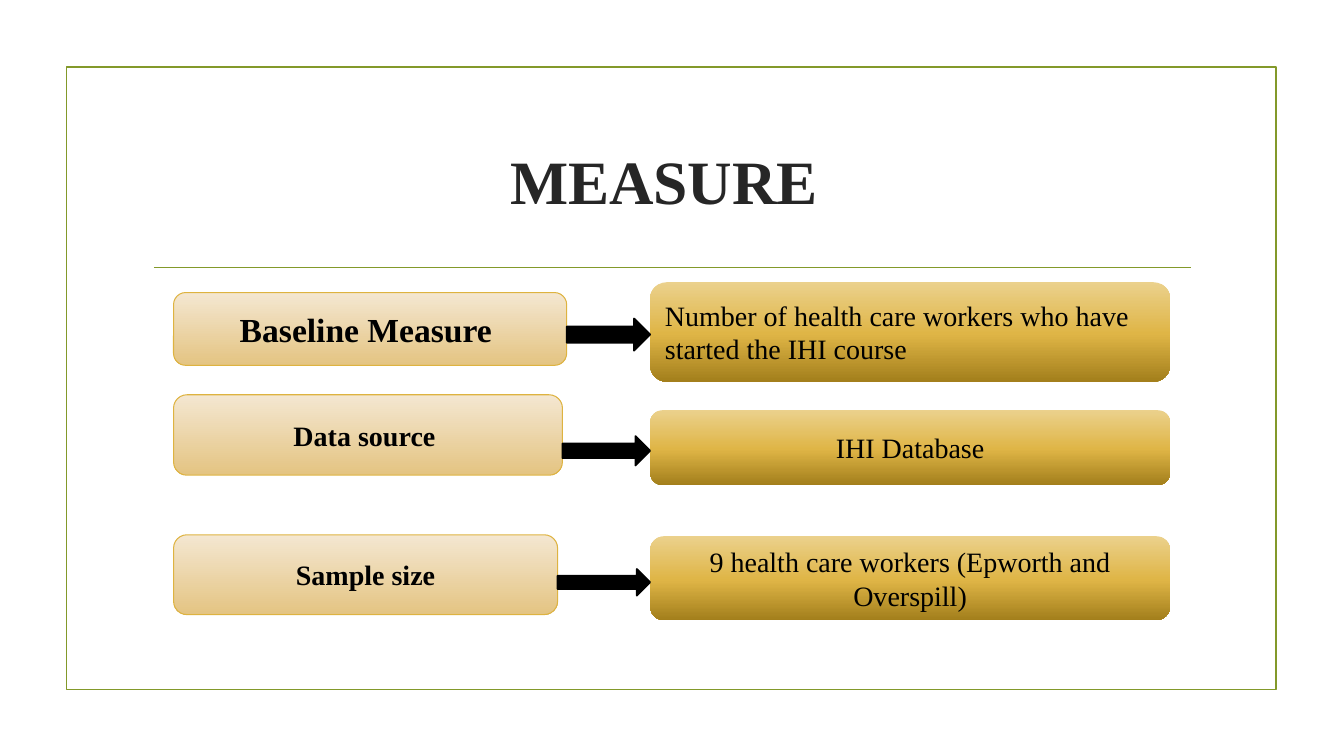
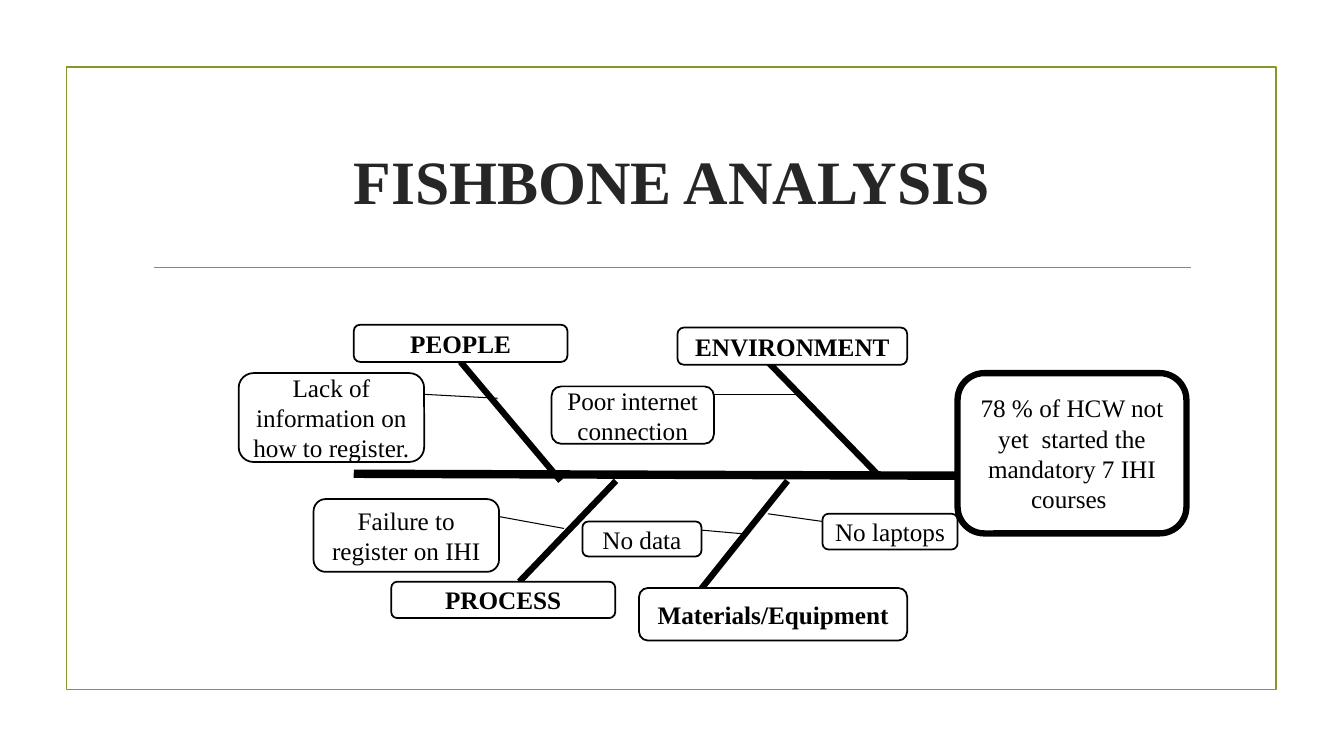
"""Build the measure and fishbone analysis slides."""
import copy

import pptx
import pptx.dml.color
import pptx.enum.shapes
import pptx.enum.text
import pptx.oxml.ns
import pptx.oxml.xmlchemy
import pptx.util

Pt = pptx.util.Pt
SHAPE = pptx.enum.shapes.MSO_SHAPE
ALIGN = pptx.enum.text.PP_ALIGN
qn = pptx.oxml.ns.qn

COLORS = {"frame": "83992A", "title": "262626", "black": "000000", "white": "FFFFFF",
          "sand_line": "DEB340"}
SAND = [(0, "F4E7D1"), (1, "E4C482")]
GOLD = [(0, "EBD18C"), (0.52, "DFB546"), (1, "A37F1C")]
FONT = "Times New Roman"
TITLE_FONT = {"name": FONT, "size": Pt(44), "bold": True}
TITLE_BOX = {"left": Pt(102), "top": Pt(77), "width": Pt(756), "height": Pt(103)}
FRAME = (47.5, 48, 864, 444.5)
RULE = (110, 191, 850.5, 191)

LABEL_LEFT, VALUE_LEFT, VALUE_WIDTH = 124, 464.4, 371.5
MEASURES = [
    {"label": ("Baseline Measure ", 24, 209, 280.8, 52),
     "value": ("Number of health care workers who have started the IHI course", 201.6, 71),
     "align": ALIGN.LEFT, "arrow": (227.5, 23)},
    {"label": ("Data source ", 20, 282, 277.8, 57.5),
     "value": ("IHI Database", 293, 53.5),
     "align": ALIGN.CENTER, "arrow": (311.5, 21)},
    {"label": ("Sample size", 20, 382, 274.3, 57),
     "value": ("9 health care workers (Epworth and Overspill)", 383, 60),
     "align": ALIGN.CENTER, "arrow": (406.5, 19)},
]

SPINE = (252.7, 338.4, 684, 339.8)
BONES = {
    "PEOPLE": (330.5, 258.5, 400.5, 343.5),
    "ENVIRONMENT": (548.5, 258.5, 626.5, 338.5),
    "PROCESS": (371, 415.5, 440, 343.5),
    "Materials/Equipment": (501, 420.5, 562.5, 343.5),
}
CATEGORIES = [
    ("PEOPLE", SHAPE.ROUNDED_RECTANGLE, (252.7, 232, 152.6, 26.5)),
    ("ENVIRONMENT", SHAPE.ROUNDED_RECTANGLE, (484, 234, 164, 26.5)),
    ("PROCESS", SHAPE.FLOWCHART_ALTERNATE_PROCESS, (279.5, 415.5, 160, 26)),
    ("Materials/Equipment", SHAPE.ROUNDED_RECTANGLE, (456.5, 420, 191.5, 37.5)),
]
CAUSES = [
    ("No laptops", (587.5, 367, 96.5, 25.5), (587.5, 372.5, 548.5, 367)),
    ("No data", (416, 372.5, 85, 25), (488, 377.5, 533, 381.5)),
    ("Failure to register on IHI", (224, 356.5, 132.5, 52), (345.5, 367, 403, 377.5)),
    ("Lack of information on how to register.", (170.5, 266.5, 132.5, 63.5),
     (299.5, 281.5, 355.5, 284.5)),
    ("Poor internet connection", (394, 276, 116, 41), (504, 281.5, 572.5, 281.5)),
]
EFFECT = ("78 % of HCW not yet  started the mandatory 7 IHI courses ",
          (684, 266.5, 163.5, 114.5))


def rgb(value):
    return pptx.dml.color.RGBColor.from_string(value)


def apply(obj, fmt):
    for name, value in fmt.items():
        setattr(obj, name, value)


def set_gradient(sp, stops):
    sp.fill.gradient()
    sp.fill.gradient_angle = 270
    gs_list = next(sp.element.iter(qn("a:gsLst")))
    while len(gs_list) < len(stops):
        gs_list.append(copy.deepcopy(gs_list[-1]))
    for stop, (position, color) in zip(sp.fill.gradient_stops, stops):
        stop.position = position
        stop.color.rgb = rgb(color)


def set_line(obj, color, width):
    obj.line.color.rgb = rgb(COLORS[color])
    obj.line.width = Pt(width)


def add_box(slide, kind, box, fill=None, line=None, text="", size=18, bold=False,
            align=ALIGN.CENTER):
    sp = slide.shapes.add_shape(kind, *map(Pt, box))
    sp.shadow.inherit = False
    if isinstance(fill, list):
        set_gradient(sp, fill)
    elif fill:
        sp.fill.solid()
        sp.fill.fore_color.rgb = rgb(COLORS[fill])
    else:
        sp.fill.background()
    if line:
        set_line(sp, *line)
    else:
        sp.line.fill.background()
    if text:
        p = sp.text_frame.paragraphs[0]
        p.alignment = align
        r = p.add_run()
        r.text = text
        apply(r.font, {"name": FONT, "size": Pt(size), "bold": bold})
        r.font.color.rgb = rgb(COLORS["black"])
    return sp


def add_line(slide, ends, color, width):
    line = slide.shapes.add_connector(pptx.enum.shapes.MSO_CONNECTOR.STRAIGHT, *map(Pt, ends))
    set_line(line, color, width)
    line.element.spPr.append(pptx.oxml.xmlchemy.OxmlElement("a:effectLst"))
    return line


def add_slide(prs, layout, title):
    slide = prs.slides.add_slide(layout)
    slide.shapes.title.text = title
    p = slide.shapes.title.text_frame.paragraphs[0]
    p.alignment = ALIGN.CENTER
    r = p.runs[0]
    apply(r.font, TITLE_FONT)
    r.font.color.rgb = rgb(COLORS["title"])
    return slide


def move_frame_to_layout(slide, layout):
    parts = [add_box(slide, SHAPE.RECTANGLE, FRAME, line=("frame", 1.25)),
             add_line(slide, RULE, "frame", 1.25)]
    for i, part in enumerate(parts):
        next(part.element.iter(qn("p:cNvPr"))).set("id", str(20 + i))
        layout.shapes.element.insert(2 + i, part.element)
    apply(layout.placeholders[0], TITLE_BOX)


def fill_measures(slide):
    for row in MEASURES:
        text, size, top, width, height = row["label"]
        add_box(slide, SHAPE.FLOWCHART_ALTERNATE_PROCESS, (LABEL_LEFT, top, width, height),
                SAND, ("sand_line", 0.75), text, size, True)
        text, top, height = row["value"]
        add_box(slide, SHAPE.FLOWCHART_ALTERNATE_PROCESS,
                (VALUE_LEFT, top, VALUE_WIDTH, height), GOLD, None, text, 20,
                align=row["align"])
        top, height = row["arrow"]
        left = LABEL_LEFT + width
        add_box(slide, SHAPE.RIGHT_ARROW, (left, top, VALUE_LEFT - left, height),
                "black", ("black", 1.25))


def fill_fishbone(slide):
    add_line(slide, SPINE, "black", 6)
    bones = {name: add_line(slide, ends, "black", 4.5) for name, ends in BONES.items()}
    text, box = EFFECT
    add_box(slide, SHAPE.FLOWCHART_ALTERNATE_PROCESS, box, "white", ("black", 4.5), text)
    categories = {name: add_box(slide, kind, box, "white", ("black", 1.25), name, bold=True)
                  for name, kind, box in CATEGORIES}
    bones["PEOPLE"].begin_connect(categories["PEOPLE"], 2)
    for text, box, ends in CAUSES:
        add_line(slide, ends, "black", 0.75)
        add_box(slide, SHAPE.FLOWCHART_ALTERNATE_PROCESS, box, "white", ("black", 1.25), text)


def main():
    prs = pptx.Presentation()
    apply(prs, {"slide_width": Pt(960), "slide_height": Pt(540)})
    layout = prs.slide_layouts[5]
    measure = add_slide(prs, layout, "MEASURE ")
    move_frame_to_layout(measure, layout)
    fill_measures(measure)
    fill_fishbone(add_slide(prs, layout, "FISHBONE ANALYSIS"))
    prs.save("out.pptx")


if __name__ == "__main__":
    main()
